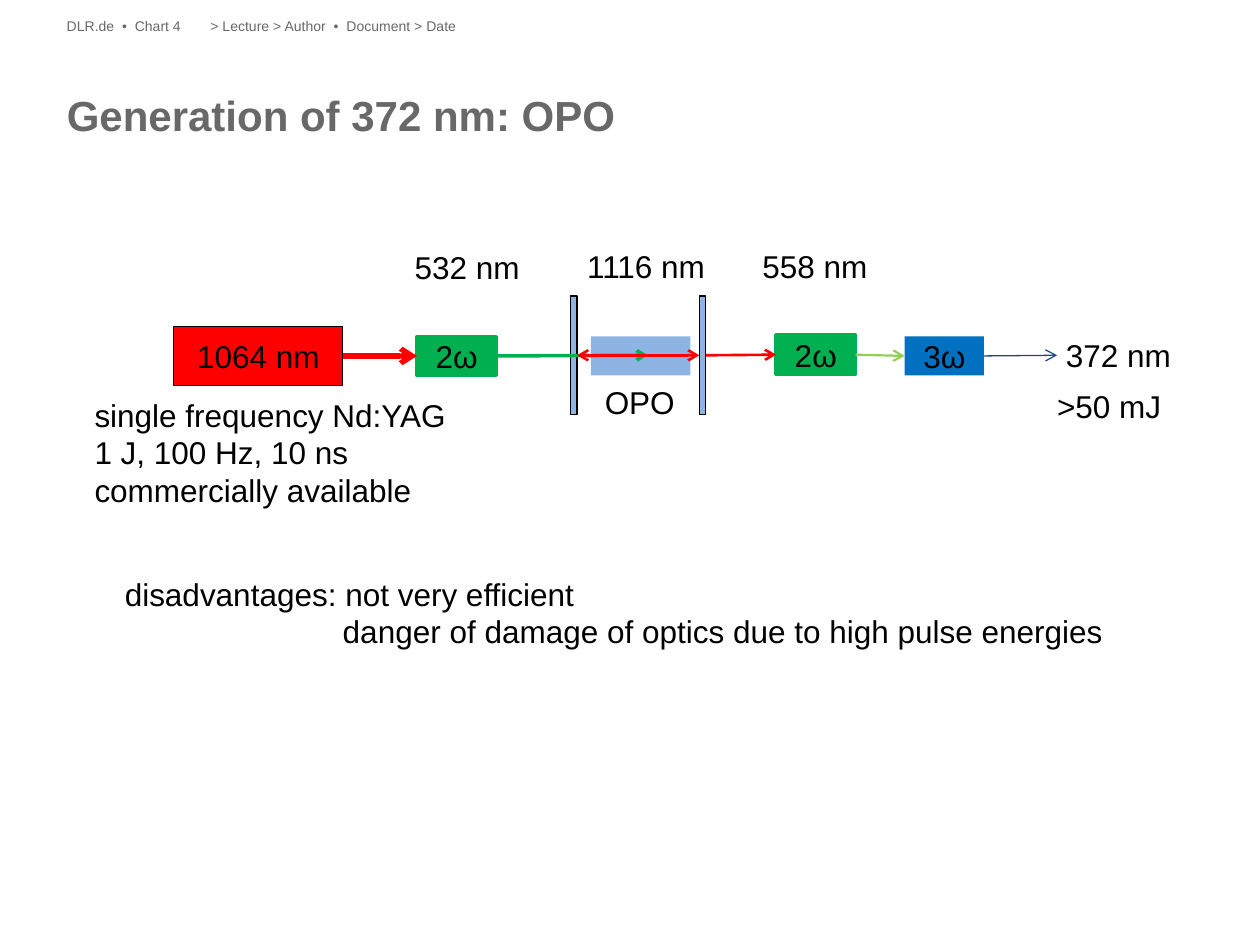
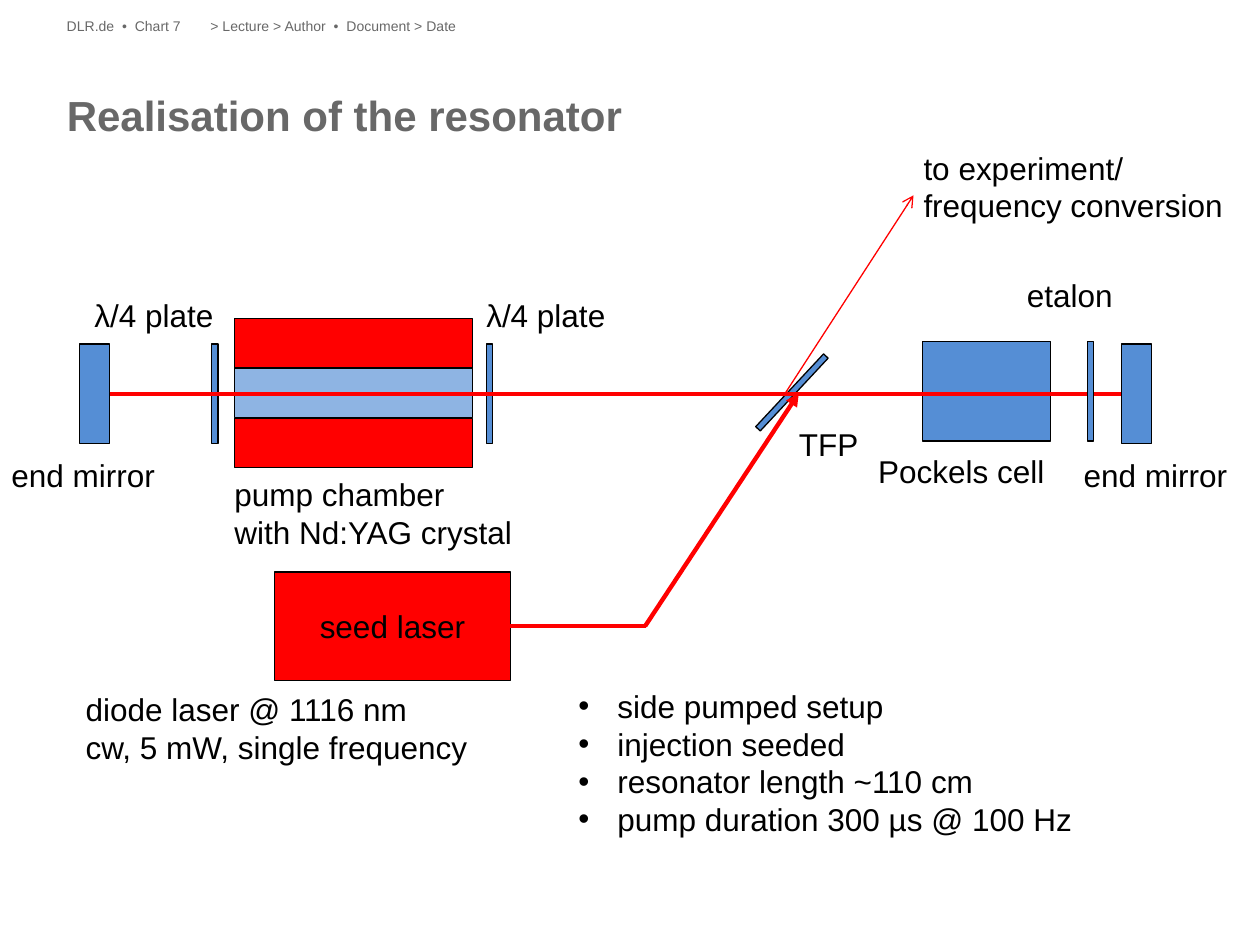
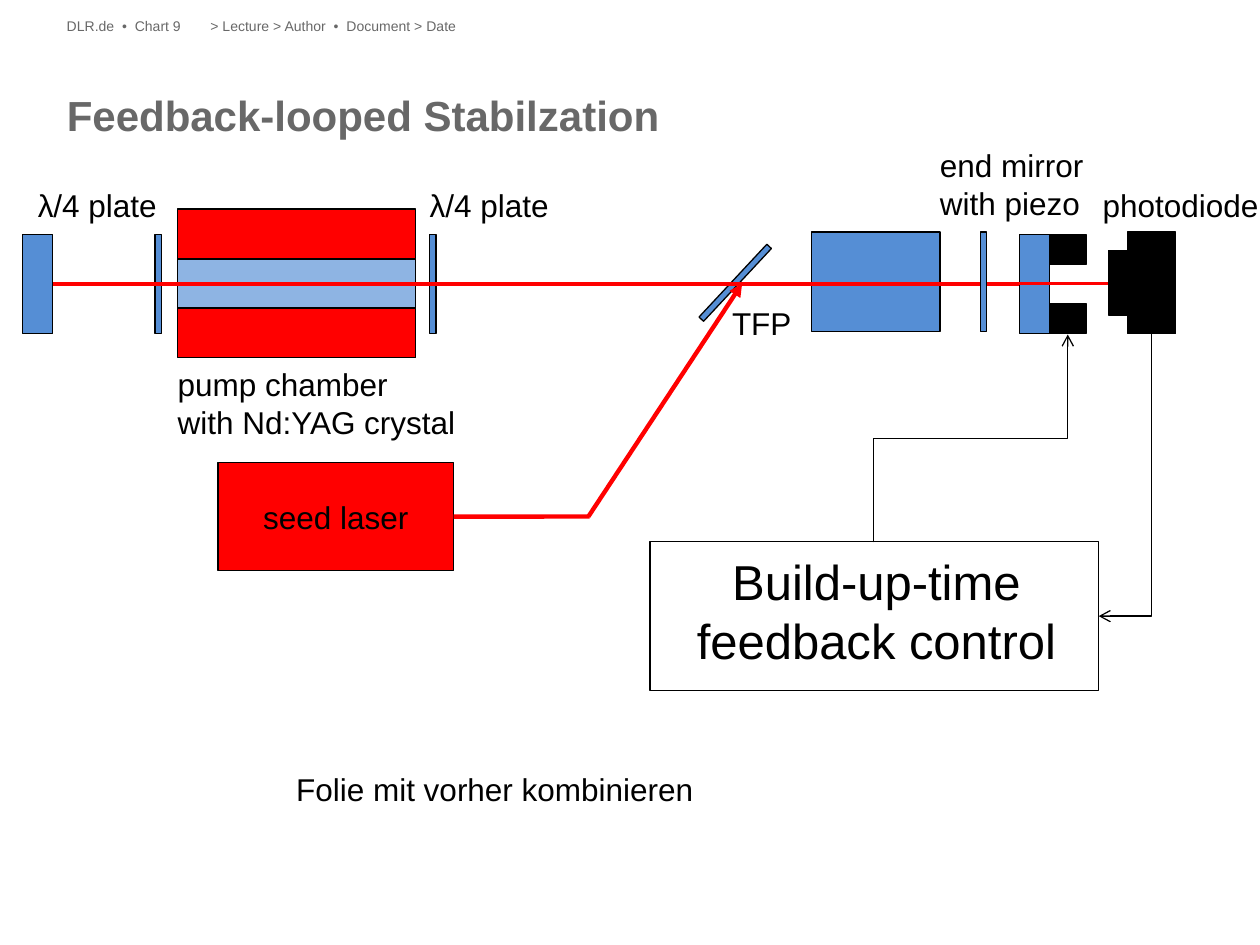
from pptx import Presentation
from pptx.dml.color import RGBColor
from pptx.enum.shapes import MSO_CONNECTOR, MSO_SHAPE
from pptx.enum.text import MSO_ANCHOR, MSO_AUTO_SIZE, PP_ALIGN
from pptx.oxml.ns import qn
from pptx.oxml.xmlchemy import OxmlElement
from pptx.util import Inches, Pt

BLACK = RGBColor(0x00, 0x00, 0x00)
GREY = RGBColor(0x68, 0x68, 0x68)
RED = RGBColor(0xFF, 0x00, 0x00)
GREEN = RGBColor(0x00, 0xB0, 0x50)
LIME = RGBColor(0x92, 0xD0, 0x50)
BLUE = RGBColor(0x00, 0x70, 0xC0)
NAVY = RGBColor(0x1F, 0x49, 0x7D)
GLASS = RGBColor(0x55, 0x8E, 0xD5)
CRYSTAL = RGBColor(0x8E, 0xB4, 0xE3)

LABEL = {"name": "Arial", "size": Pt(18), "bold": False}
TITLE = {"name": "Arial", "size": Pt(24), "bold": True}
HEADER = {"name": "Arial", "size": Pt(8), "bold": False}
CONTROL = {"name": "Arial", "size": Pt(28), "bold": False}


def add_box(s, at, text="", fill=None, line=None, width=0.75, sp=None,
            fmt=LABEL, color=BLACK, align=PP_ALIGN.LEFT):
    """Place a rectangle, a plain label or a given placeholder and write its text."""
    at = [Inches(v) for v in at]
    outlined = fill is not None or line is not None
    wrap = sp is not None
    if sp is not None:
        sp.left, sp.top, sp.width, sp.height = at
    elif outlined:
        sp = s.shapes.add_shape(MSO_SHAPE.RECTANGLE, *at)
        sp.shadow.inherit = False
        align = PP_ALIGN.CENTER
        if fill is None:
            sp.fill.background()
        else:
            sp.fill.solid()
            sp.fill.fore_color.rgb = fill
        if line is None:
            sp.line.fill.background()
        else:
            sp.line.color.rgb = line
            sp.line.width = Pt(width)
    else:
        sp = s.shapes.add_textbox(*at)
    if not text:
        return sp
    tf = sp.text_frame
    frame = {"margin_left": 0, "margin_top": 0, "margin_right": 0, "margin_bottom": 0,
             "word_wrap": wrap, "auto_size": MSO_AUTO_SIZE.NONE,
             "vertical_anchor": MSO_ANCHOR.MIDDLE if outlined else MSO_ANCHOR.TOP}
    for name, value in frame.items():
        setattr(tf, name, value)
    for i, row in enumerate(text.split("\n")):
        p = tf.add_paragraph() if i else tf.paragraphs[0]
        p.alignment, p.line_spacing, p.space_before = align, 1.0, Pt(0)
        r = p.add_run()
        r.text = row
        for name, value in fmt.items():
            setattr(r.font, name, value)
        r.font.color.rgb = color
    return sp


def add_line(s, start, end, color, width, head=None, tail=None,
             kind=MSO_CONNECTOR.STRAIGHT):
    """Draw a connector; each end is a point (x, y) or a joint (shape, side)."""
    c = s.shapes.add_connector(kind, 0, 0, 0, 0)
    if isinstance(start[0], (int, float)):
        c.begin_x, c.begin_y = Inches(start[0]), Inches(start[1])
    else:
        c.begin_connect(*start)
    if isinstance(end[0], (int, float)):
        c.end_x, c.end_y = Inches(end[0]), Inches(end[1])
    else:
        c.end_connect(*end)
    c.line.color.rgb = color
    c.line.width = Pt(width)
    ln = c.line._get_or_add_ln()
    for tag, arrow in (("a:headEnd", head), ("a:tailEnd", tail)):
        if arrow:
            tip = OxmlElement(tag)
            tip.set("type", arrow)
            ln.append(tip)
    c._element.spPr.append(OxmlElement("a:effectLst"))
    return c


prs = Presentation()
prs.slide_width, prs.slide_height = Inches(10), Inches(7.5)

# Slides with title and header line
slides = []
for title, number, layout in (("Generation of 372 nm: OPO", 4, 5),
                              ("Realisation of the resonator", 7, 1),
                              ("Feedback-looped Stabilzation", 9, 5)):
    s = prs.slides.add_slide(prs.slide_layouts[layout])
    add_box(s, (0.53, 0.71, 8.94, 0.81), title, sp=s.shapes.title,
            fmt=TITLE, color=GREY)
    for x, w, text in ((1.67, 7.8, "> Lecture > Author  •  Document > Date"),
                       (0.53, 1.14, f"DLR.de  •  Chart {number}")):
        add_box(s, (x, 0.14, w, 0.16), text, fmt=HEADER, color=GREY)
    slides.append(s)
opo, resonator, feedback = slides

# OPO: optical elements
s = opo
laser = add_box(s, (1.38, 2.59, 1.34, 0.47), "1064 nm", RED, BLACK)
mirror_in, mirror_out = [add_box(s, (x, 2.35, 0.05, 0.94), "", CRYSTAL, BLACK)
                         for x in (4.53, 5.55)]
add_box(s, (4.69, 2.67, 0.79, 0.31), "", CRYSTAL)
tripler = add_box(s, (7.18, 2.67, 0.63, 0.31), "3ω", BLUE)
doubler_1, doubler_2 = [add_box(s, (x, y, 0.63, 0.31), "2ω", GREEN, GREEN, 2)
                        for x, y in ((3.31, 2.67), (6.16, 2.66))]

# OPO: beams
for start, end, color, width, head in (
        ((laser, 3), (doubler_1, 1), RED, 3, None),
        ((mirror_out, 3), (doubler_2, 1), RED, 1.5, None),
        ((doubler_2, 3), (tripler, 1), LIME, 1.25, None),
        ((doubler_1, 3), (5.14, 2.82), GREEN, 2, None),
        ((mirror_in, 3), (mirror_out, 1), RED, 1.5, "arrow"),
        ((tripler, 3), (8.39, 2.82), NAVY, 0.75, None)):
    add_line(s, start, end, color, width, head, "arrow")

# Resonator and feedback: the same cavity, shifted by dx and dy
for s, dx, dy, cell_x, etalon_x, mirror_x in ((resonator, 0, 0, 7.32, 8.63, 8.9),
                                              (feedback, -0.45, -0.87, 6.44, 7.78, 8.09)):
    top = 2.73 + dy
    for x in (1.68, 3.86):
        add_box(s, (x + dx, top, 0.05, 0.79), "", GLASS, BLACK)
    polarizer = add_box(s, (6.26 + dx, 2.72 + dy, 0.05, 0.79), "", GLASS, BLACK)
    polarizer.rotation = 43
    add_box(s, (cell_x, 2.71 + dy, 1.02, 0.79), "", GLASS, BLACK)
    for row, fill in enumerate((RED, CRYSTAL, RED)):
        add_box(s, (1.86 + dx, 2.53 + dy + 0.395 * row, 1.89, 0.39), "", fill, BLACK)
    mirror_left, mirror_right = [add_box(s, (x, top, 0.24, 0.79), "", GLASS, BLACK)
                                 for x in (0.63 + dx, mirror_x)]
    add_line(s, (mirror_left, 3), (mirror_right, 1), RED, 2.5)
    add_box(s, (etalon_x, 2.71 + dy, 0.05, 0.79), "", GLASS, BLACK)

    seed = add_box(s, (2.18 + dx, 4.54 + dy, 1.87, 0.86), "seed laser", RED, BLACK)
    add_line(s, (5.12 + dx, 4.97 + dy), (6.34 + dx, 3.12 + dy), RED, 2.5, tail="triangle")
    add_line(s, (seed, 3), (5.13 + dx, 4.97 + dy), RED, 2.5)

    for x, y, w, h, text in ((0.75, 2.35, 0.97, 0.3, "λ/4 plate"),
                             (3.86, 2.35, 0.97, 0.3, "λ/4 plate"),
                             (1.86, 3.77, 2.28, 0.61, "pump chamber\nwith Nd:YAG crystal")):
        add_box(s, (x + dx, y + dy, w, h), text)

# Resonator: output beam and list
s = resonator
add_line(s, (6.22, 3.14), (7.25, 1.55), RED, 0.75, tail="arrow")
body = add_box(s, (4.59, 5.45, 3.96, 1.21),
               "side pumped setup\ninjection seeded\nresonator length ~110 cm\n"
               "pump duration 300 µs @ 100 Hz", sp=s.placeholders[1])
for p in body.text_frame.paragraphs:
    pPr = p._p.get_or_add_pPr()
    pPr.set("marL", str(Inches(0.31)))
    pPr.set("indent", str(-Inches(0.31)))
    bullet = OxmlElement("a:buChar")
    bullet.set("char", "•")
    pPr.append(bullet)

# Feedback: beam to the photodiode, piezo and control box
s = feedback
add_line(s, (8.09, 2.25), (8.83, 2.25), RED, 1.5)
for at in ((8.8, 1.99, 0.16, 0.51), (8.95, 1.84, 0.38, 0.81),
           (8.33, 1.86, 0.29, 0.24), (8.33, 2.41, 0.29, 0.24)):
    add_box(s, at, "", BLACK, BLACK)
add_box(s, (5.16, 4.3, 3.56, 1.18), line=BLACK)
add_box(s, (5.51, 4.38, 2.89, 0.94), "Build-up-time\nfeedback control",
        fmt=CONTROL, align=PP_ALIGN.CENTER)

# Feedback: signal paths, given before their quarter turn
for start, end, preset in (((7.81, 3.56), (10.05, 3.98), "bentConnector2"),
                           ((8.53, 4.25), (6.88, 2.71), "bentConnector3")):
    c = add_line(s, start, end, BLACK, 0.75, tail="arrow", kind=MSO_CONNECTOR.ELBOW)
    spPr = c._element.spPr
    spPr.find(qn("a:xfrm")).set("rot", "5400000")
    spPr.find(qn("a:prstGeom")).set("prst", preset)

# Labels
for s, x, y, w, h, text in (
        (opo, 0.75, 3.14, 2.81, 0.91,
         "single frequency Nd:YAG\n1 J, 100 Hz, 10 ns\ncommercially available"),
        (opo, 4.8, 3.04, 0.56, 0.3, "OPO"),
        (opo, 3.29, 1.97, 0.84, 0.3, "532 nm"),
        (opo, 4.66, 1.96, 0.94, 0.3, "1116 nm"),
        (opo, 6.05, 1.96, 0.84, 0.3, "558 nm"),
        (opo, 8.46, 2.67, 0.84, 0.3, "372 nm"),
        (opo, 8.39, 3.07, 0.83, 0.3, ">50 mJ"),
        (resonator, 0.09, 3.62, 1.15, 0.3, "end mirror"),
        (resonator, 8.6, 3.62, 1.15, 0.3, "end mirror"),
        (resonator, 6.97, 3.59, 1.33, 0.3, "Pockels cell"),
        (resonator, 8.15, 2.19, 0.69, 0.3, "etalon"),
        (resonator, 6.34, 3.37, 0.48, 0.3, "TFP"),
        (resonator, 0.68, 5.48, 3.06, 0.61,
         "diode laser @ 1116 nm\ncw, 5 mW, single frequency"),
        (resonator, 7.33, 1.18, 2.4, 0.61, "to experiment/\nfrequency conversion"),
        (feedback, 7.46, 1.16, 1.15, 0.61, "end mirror\nwith piezo"),
        (feedback, 5.81, 2.41, 0.48, 0.3, "TFP"),
        (feedback, 8.75, 1.48, 1.25, 0.3, "photodiode"),
        (feedback, 2.35, 6.11, 3.18, 0.3, "Folie mit vorher kombinieren")):
    add_box(s, (x, y, w, h), text)

# OPO: drawbacks, second line indented under the first reason
sp = add_box(opo, (0.99, 4.56, 7.91, 0.61),
             "disadvantages: not very efficient\n"
             "danger of damage of optics due to high pulse energies")
sp.text_frame.paragraphs[1]._p.get_or_add_pPr().set("marL", str(Inches(1.73)))

prs.save("out.pptx")
